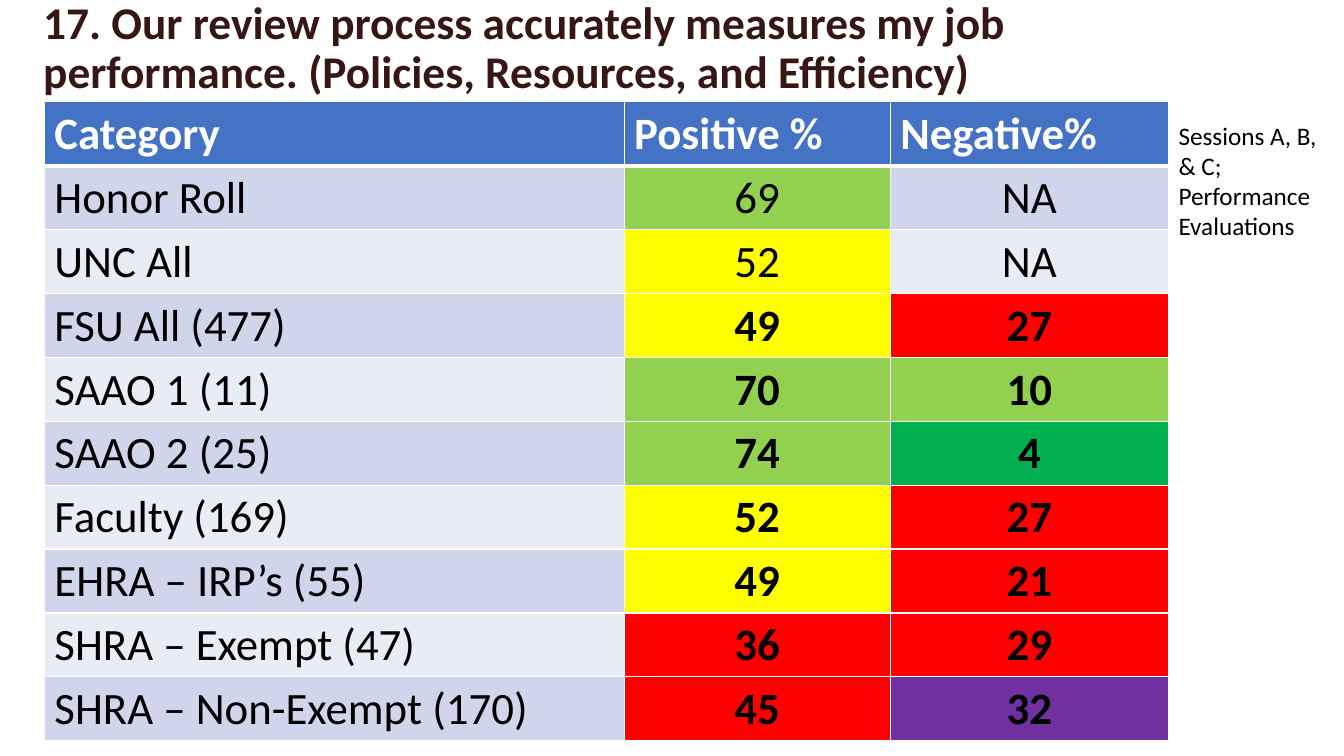
from dataclasses import dataclass
from lxml import etree
from pptx import Presentation, util as u
from pptx.dml.color import RGBColor
from pptx.enum import text
from pptx.oxml.ns import qn


@dataclass(frozen=True)
class Theme:
    font: str = "Calibri"
    title_size: float = 32.4
    table_size: float = 32
    note_size: float = 18
    title: str = "371713"
    ink: str = "000000"
    white: str = "FFFFFF"
    header: str = "4472C4"
    bands: tuple = ("CFD5EA", "E9EBF5")
    lime: str = "92D050"
    yellow: str = "FFFF00"
    red: str = "FF0000"
    green: str = "00B050"
    purple: str = "7030A0"


T = Theme()
TITLE = ("17. Our review process accurately measures my job performance. "
         "(Policies, Resources, and Efficiency)")
NOTE = "Sessions A, B, & C; Performance Evaluations"
HEADER = ("Category", "Positive %", "Negative%")
BENCHMARKS = 2
RATINGS = [
    ("Honor Roll", ("69", T.lime), ("NA", None)),
    ("UNC All", ("52", T.yellow), ("NA", None)),
    ("FSU All (477)", ("49", T.yellow), ("27", T.red)),
    ("SAAO 1 (11)", ("70", T.lime), ("10", T.lime)),
    ("SAAO 2 (25)", ("74", T.lime), ("4", T.green)),
    ("Faculty (169)", ("52", T.yellow), ("27", T.red)),
    ("EHRA – IRP’s (55)", ("49", T.yellow), ("21", T.red)),
    ("SHRA – Exempt (47)", ("36", T.red), ("29", T.red)),
    ("SHRA – Non-Exempt (170)", ("45", T.red), ("32", T.purple)),
]
COLUMNS = (5.75, 2.64, 2.76)
ROW = 0.59
TABLE_LEFT, TABLE_TOP, TABLE_HEIGHT = 0.44, 1.01, 6.33
TABLE_WIDTH = sum(COLUMNS)


def write(tf, words, size, color, bold=False, align=None):
    p = tf.paragraphs[0]
    p.text = words
    p.alignment = align
    p.font.name = T.font
    p.font.size = u.Pt(size)
    p.font.bold = bold
    p.font.color.rgb = RGBColor.from_string(color)
    return p


def add_text(s, box, *style):
    tf = s.shapes.add_textbox(*map(u.Inches, box)).text_frame
    tf.word_wrap = True
    return tf, write(tf, *style)


def set_borders(cell, widths):
    tcPr = cell._tc.get_or_add_tcPr()
    for side, width in zip("LRTB", widths):
        ln = etree.SubElement(tcPr, qn(f"a:ln{side}"), w=str(u.Pt(width)))
        fill = etree.SubElement(ln, qn("a:solidFill"))
        etree.SubElement(fill, qn("a:srgbClr"), val=T.white)


def set_cell(cell, words, fill, color, bold, align, widths):
    set_borders(cell, widths)
    cell.fill.solid()
    cell.fill.fore_color.rgb = RGBColor.from_string(fill)
    write(cell.text_frame, words, T.table_size, color, bold, align)


def add_ratings(s):
    frame = s.shapes.add_table(
        len(RATINGS) + 1, len(COLUMNS), u.Inches(TABLE_LEFT), u.Inches(TABLE_TOP),
        u.Inches(TABLE_WIDTH), u.Inches(TABLE_HEIGHT))
    table = frame.table
    for column, width in zip(table.columns, COLUMNS):
        column.width = u.Inches(width)
    for row in table.rows:
        row.height = u.Inches(ROW)
    frame.height = u.Inches(TABLE_HEIGHT)
    for c, label in enumerate(HEADER):
        set_cell(table.cell(0, c), label, T.header, T.white, True, None, (1, 1, 1, 3))
    for r, (category, *scores) in enumerate(RATINGS):
        band = T.bands[r % 2]
        widths = (1, 1, 1 if r else 3, 1)
        set_cell(table.cell(r + 1, 0), category, band, T.ink, False, None, widths)
        for c, (score, fill) in enumerate(scores, 1):
            set_cell(table.cell(r + 1, c), score, fill or band, T.ink,
                     r >= BENCHMARKS, text.PP_ALIGN.CENTER, widths)


def main():
    prs = Presentation()
    prs.slide_width, prs.slide_height = u.Inches(13.33), u.Inches(7.5)
    s = prs.slides.add_slide(prs.slide_layouts[6])
    tf, p = add_text(s, (0.33, 0.33, 11.68, 0.8), TITLE, T.title_size, T.title, True)
    tf.vertical_anchor = text.MSO_ANCHOR.MIDDLE
    tf.margin_bottom = u.Inches(0.54)
    p.line_spacing = 0.9
    add_ratings(s)
    tf, p = add_text(s, (TABLE_LEFT + TABLE_WIDTH, 1.14, 1.62, 1.31),
                     NOTE, T.note_size, T.ink)
    tf.auto_size = text.MSO_AUTO_SIZE.SHAPE_TO_FIT_TEXT
    prs.save("out.pptx")


if __name__ == "__main__":
    main()
